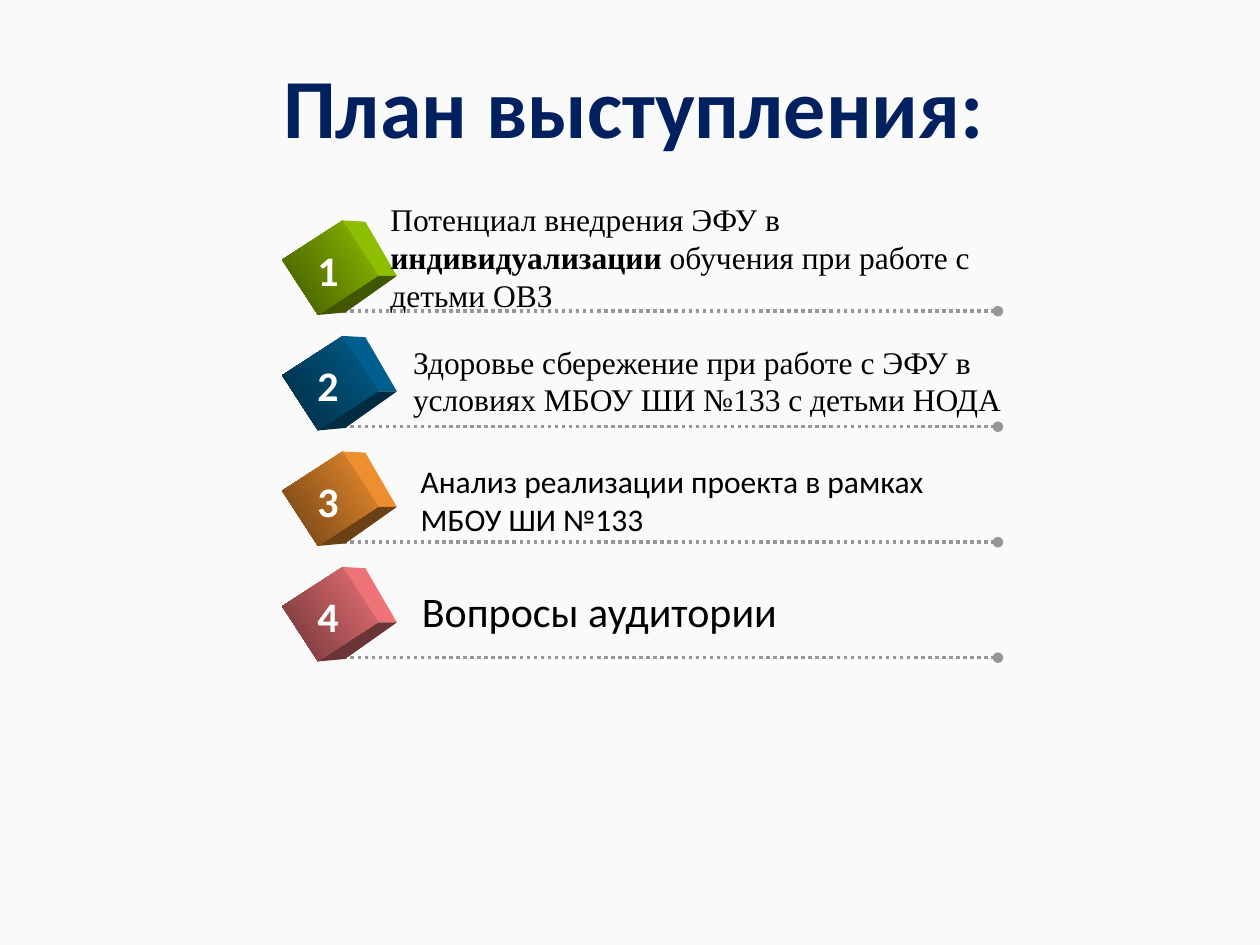
from lxml import etree
from pptx import Presentation
from pptx.dml.color import RGBColor
from pptx.enum.dml import MSO_LINE
from pptx.enum.shapes import MSO_CONNECTOR, MSO_SHAPE
from pptx.enum.text import MSO_ANCHOR, MSO_AUTO_SIZE, PP_ALIGN
from pptx.oxml.ns import qn
from pptx.util import Inches, Pt

RECT = MSO_SHAPE.RECTANGLE
LINE = MSO_CONNECTOR.STRAIGHT
DOTS = MSO_LINE.ROUND_DOT
GROW = MSO_AUTO_SIZE.SHAPE_TO_FIT_TEXT
MIDDLE = MSO_ANCHOR.MIDDLE
CENTER = PP_ALIGN.CENTER

SANS, SERIF = "Calibri", "Times New Roman"
FIRST, STEP = 2.47, 2.75 / 3  # first dotted line and the gap between lines

# Cube faces: x on the slide, y from the dotted line
SIDE = [(2.72, -0.72), (2.9, -0.71), (3.15, -0.28), (3, -0.28)]
BASE = [(2.52, 0.03), (3, -0.28), (3.15, -0.28), (2.74, 0.01)]

# Colour, text runs (text, bold), font, size, box (left, top, width, height), wrap
ITEMS = [
    ("99CC00", [("Потенциал внедрения ЭФУ в ", False),
                ("индивидуализации", True),
                (" обучения при работе с детьми ОВЗ", False)],
     SERIF, 18, (3, 1.54, 5, 1.01), True),
    ("006699", [("Здоровье сбережение при работе с ЭФУ в условиях "
                 "МБОУ ШИ №133 с детьми НОДА", False)],
     SERIF, 18, (3.18, 2.67, 5, 0.71), True),
    ("FF9933", [("Анализ реализации проекта в рамках МБОУ ШИ №133", False)],
     SANS, 18, (3.24, 3.62, 4.35, 0.71), True),
    ("FF7C80", [("Вопросы аудитории", False)],
     SANS, 24, (3.25, 4.6, 3.05, 0.51), False),
]


def color(code):
    return RGBColor.from_string(code)


def shade(code, part):
    return "".join(f"{round(int(code[i:i + 2], 16) * part):02X}" for i in (0, 2, 4))


class Deck:
    ink, navy, gray, white = "000000", "002060", "969696", "FFFFFF"

    def __init__(self, slide):
        self.slide = slide
        self.shapes = slide.shapes

    def back(self, code):
        fill = self.slide.background.fill
        fill.solid()
        fill.fore_color.rgb = color(code)

    def style(self, run, face, size, code, bold):
        font = run.font
        font.name, font.size, font.bold = face, Pt(size), bold
        font.color.rgb = color(code)

    def title(self, text, box):
        shape = self.shapes.title
        shape.left, shape.top, shape.width, shape.height = map(Inches, box)
        frame = shape.text_frame
        frame.text = text
        frame.vertical_anchor = MIDDLE
        para = frame.paragraphs[0]
        para.alignment, para.line_spacing = CENTER, 0.9
        self.style(para.runs[0], SANS, 48, self.navy, True)

    def text(self, parts, box, face, size, code, wrap):
        frame = self.shapes.add_textbox(*map(Inches, box)).text_frame
        frame.word_wrap, frame.auto_size = wrap, GROW
        para = frame.paragraphs[0]
        for words, bold in parts:
            run = para.add_run()
            run.text = words
            self.style(run, face, size, code, bold)

    def rule(self, y):
        ends = map(Inches, (2.67, y, 7.92, y))
        rule = self.shapes.add_connector(LINE, *ends)
        rule.line.color.rgb = color(self.gray)
        rule.line.width, rule.line.dash_style = Pt(2), DOTS
        props = rule.line._get_or_add_ln()
        etree.SubElement(props, qn("a:tailEnd"), type="oval")
        etree.SubElement(rule._element.spPr, qn("a:effectLst"))

    def face(self, points, y, code):
        spots = [(Inches(x), Inches(y + dy)) for x, dy in points]
        build = self.shapes.build_freeform(*spots[0])
        build.add_line_segments(spots[1:])
        shape = build.convert_to_shape()
        shape.shadow.inherit = False
        shape.fill.solid()
        shape.fill.fore_color.rgb = color(code)
        shape.line.fill.background()

    def cube(self, y, code):
        dark = shade(code, 0.42)
        self.face(SIDE, y, shade(code, 0.93))
        self.face(BASE, y, dark)
        front = self.shapes.add_shape(RECT, *map(Inches, (2.36, y - 0.63, 0.52, 0.57)))
        front.rotation = 57
        front.shadow.inherit = False
        front.line.fill.background()
        front.fill.gradient()
        front.fill.gradient_angle = 270
        for stop, tone in zip(front.fill.gradient_stops, (shade(code, 0.93), dark)):
            stop.color.rgb = color(tone)


def main():
    prs = Presentation()
    prs.slide_width, prs.slide_height = Inches(10), Inches(7.5)
    deck = Deck(prs.slides.add_slide(prs.slide_layouts[5]))
    deck.back("FAFAFA")
    deck.title("План выступления:", (0.72, 0.45, 8.62, 0.87))

    # Numbered rows
    for i, (code, parts, face, size, box, wrap) in enumerate(ITEMS):
        y = FIRST + i * STEP
        deck.rule(y)
        deck.cube(y, code)
        deck.text([(str(i + 1), True)], (2.42, y - 0.58, 0.39, 0.5),
                  SANS, 24, deck.white, False)
        deck.text(parts, box, face, size, deck.ink, wrap)

    prs.save("out.pptx")


if __name__ == "__main__":
    main()
